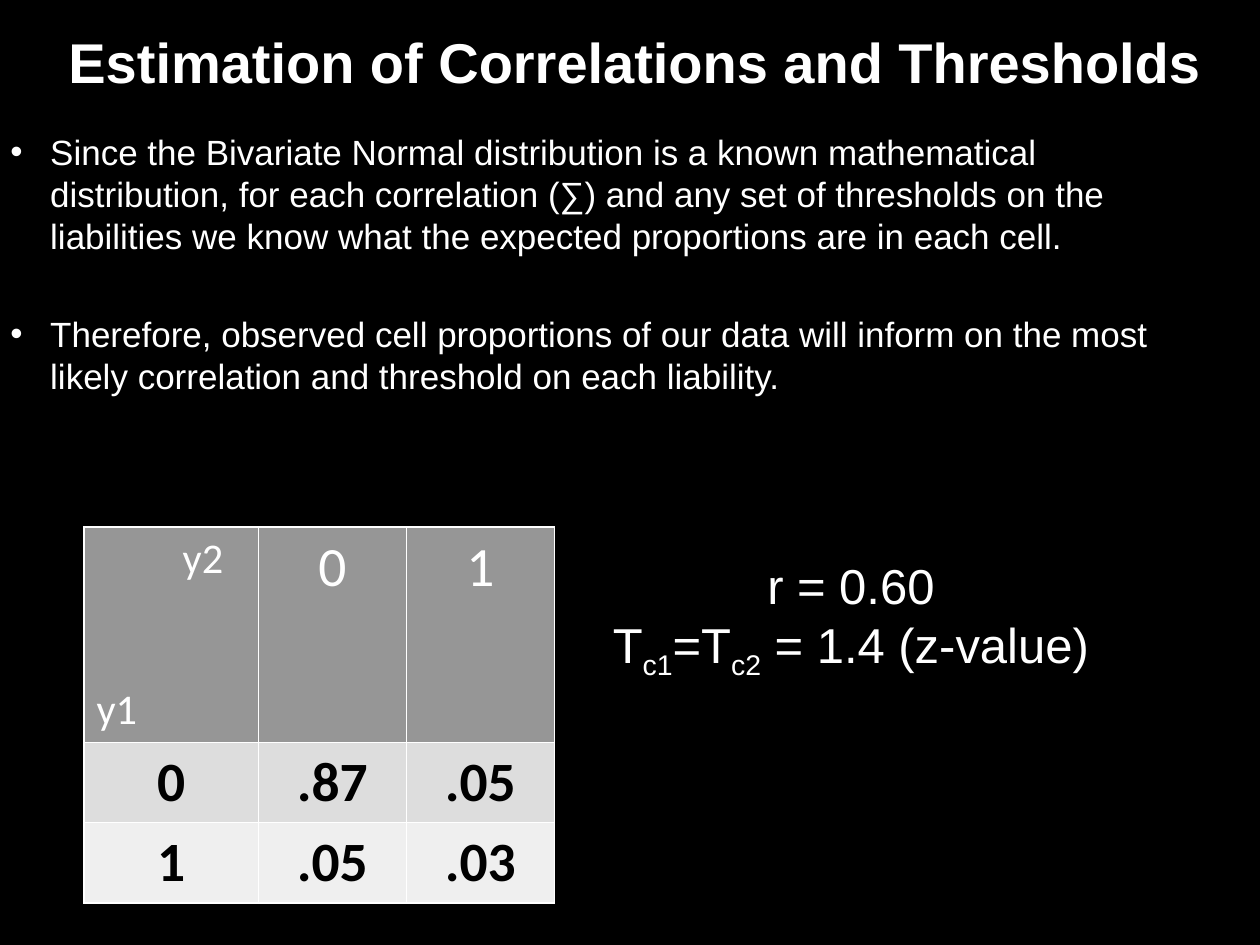
from dataclasses import dataclass

from lxml import etree
from pptx import Presentation
from pptx.dml.color import RGBColor
from pptx.enum.text import MSO_ANCHOR, MSO_AUTO_SIZE, PP_ALIGN
from pptx.oxml.ns import qn
from pptx.util import Emu, Inches, Pt

LEFT, CENTER = PP_ALIGN.LEFT, PP_ALIGN.CENTER
TOP, FIT_NONE = MSO_ANCHOR.TOP, MSO_AUTO_SIZE.NONE
WIDTH, HEIGHT = Inches(12), Inches(9)
HUES = {"back": "000000", "text": "FFFFFF", "head": "969696",
        "dark": "DDDDDD", "pale": "EFEFEF"}


@dataclass
class Box:
    """A place on the slide, in percent of its width and height."""
    left: float
    top: float
    width: float
    height: float

    def emu(self) -> list[Emu]:
        return [across(self.left), down(self.top),
                across(self.width), down(self.height)]


@dataclass
class Row:
    texts: list[str]
    fill: str
    ink: str
    bold: bool
    height: float


TITLE = Box(3.5, 2.33, 93.75, 15.44)
BODY = Box(0, 13.22, 96.67, 29.44)
RESULT = Box(47.67, 58.22, 39.75, 13.67)
GRID = Box(6.67, 55.78, 37.33, 39.66)
COLS = [13.83, 11.75, 11.75]
ROWS = [
    Row(["y2\ny1", "0", "1"], "head", "text", False, 22.78),
    Row(["0", ".87", ".05"], "dark", "back", True, 8.44),
    Row(["1", ".05", ".03"], "pale", "back", True, 8.44),
]
POINTS = [
    "Since the Bivariate Normal distribution is a known mathematical "
    "distribution, for each correlation (∑) and any set of thresholds on the "
    "liabilities we know what the expected proportions are in each cell.",
    "Therefore, observed cell proportions of our data will inform on the most "
    "likely correlation and threshold on each liability.",
]
# Each run is its text and whether it is a subscript.
RESULTS = [
    [("r = 0.60", False)],
    [("T", False), ("c1", True), ("=T", False), ("c2", True),
     (" = 1.4 (z-value)", False)],
]


def across(share: float) -> Emu:
    return Emu(round(WIDTH * share / 100))


def down(share: float) -> Emu:
    return Emu(round(HEIGHT * share / 100))


def hue(name: str) -> RGBColor:
    return RGBColor.from_string(HUES[name])


def style(para, size: float, face: str = "Arial", ink: str = "text",
          bold: bool = False, align=LEFT) -> None:
    para.alignment = align
    font = para.font
    font.size, font.name, font.bold = Pt(size), face, bold
    font.color.rgb = hue(ink)


def indent(para, left: float, first: float = 0) -> None:
    props = para._p.get_or_add_pPr()
    props.set("marL", str(Inches(left)))
    props.set("indent", str(Inches(first)))


def bullet(para) -> None:
    indent(para, 0.38, -0.38)
    props = para._p.get_or_add_pPr()
    etree.SubElement(props, qn("a:buFont")).set("typeface", "Arial")
    etree.SubElement(props, qn("a:buChar")).set("char", "•")


def frame(cell) -> None:
    """Give a cell thin white borders on all sides."""
    props = cell._tc.get_or_add_tcPr()
    for spot, side in enumerate(("lnL", "lnR", "lnT", "lnB")):
        line = etree.Element(qn(f"a:{side}"), w=str(Pt(1)))
        fill = etree.SubElement(line, qn("a:solidFill"))
        etree.SubElement(fill, qn("a:srgbClr")).set("val", HUES["text"])
        props.insert(spot, line)


def add_title(slide) -> None:
    title = slide.shapes.title
    title.left, title.top, title.width, title.height = TITLE.emu()
    text = title.text_frame
    text.text = "Estimation of Correlations and Thresholds"
    text.word_wrap, text.auto_size = False, FIT_NONE
    text.vertical_anchor = TOP
    style(text.paragraphs[0], 38.4, bold=True, align=CENTER)


def add_body(slide) -> None:
    text = slide.shapes.add_textbox(*BODY.emu()).text_frame
    text.word_wrap = True
    text.text = "\n".join(POINTS)
    for num, para in enumerate(text.paragraphs):
        if num:
            para.space_before = Pt(38.4)
        bullet(para)
        style(para, 24)


def add_result(slide) -> None:
    text = slide.shapes.add_textbox(*RESULT.emu()).text_frame
    text.word_wrap = False
    for num, parts in enumerate(RESULTS):
        para = text.add_paragraph() if num else text.paragraphs[0]
        style(para, 33.6, align=CENTER)
        for words, sub in parts:
            run = para.add_run()
            run.text = words
            if sub:
                run._r.get_or_add_rPr().set("baseline", "-25000")


def fill_cell(cell, words: str, row: Row) -> None:
    cell.fill.solid()
    cell.fill.fore_color.rgb = hue(row.fill)
    cell.margin_left = cell.margin_right = Inches(0.12)
    cell.margin_top = cell.margin_bottom = Inches(0.06)
    frame(cell)
    cell.text_frame.text = words
    paras = cell.text_frame.paragraphs
    if len(paras) == 1:
        style(paras[0], 38, "Calibri", row.ink, row.bold, CENTER)
        return
    for para in paras:
        style(para, 29, "Calibri", row.ink, row.bold)
    indent(paras[0], 0.82)
    paras[1].space_before = Pt(68)


def add_grid(slide) -> None:
    table = slide.shapes.add_table(len(ROWS), len(COLS), *GRID.emu()).table
    table.first_row = table.horz_banding = False
    for col, width in zip(table.columns, COLS):
        col.width = across(width)
    for num, row in enumerate(ROWS):
        table.rows[num].height = down(row.height)
        for spot, words in enumerate(row.texts):
            fill_cell(table.cell(num, spot), words, row)


def main() -> None:
    deck = Presentation()
    deck.slide_width, deck.slide_height = WIDTH, HEIGHT
    slide = deck.slides.add_slide(deck.slide_layouts.get_by_name("Title Only"))
    slide.background.fill.solid()
    slide.background.fill.fore_color.rgb = hue("back")
    add_title(slide)
    add_grid(slide)
    add_body(slide)
    add_result(slide)
    deck.save("out.pptx")


if __name__ == "__main__":
    main()
